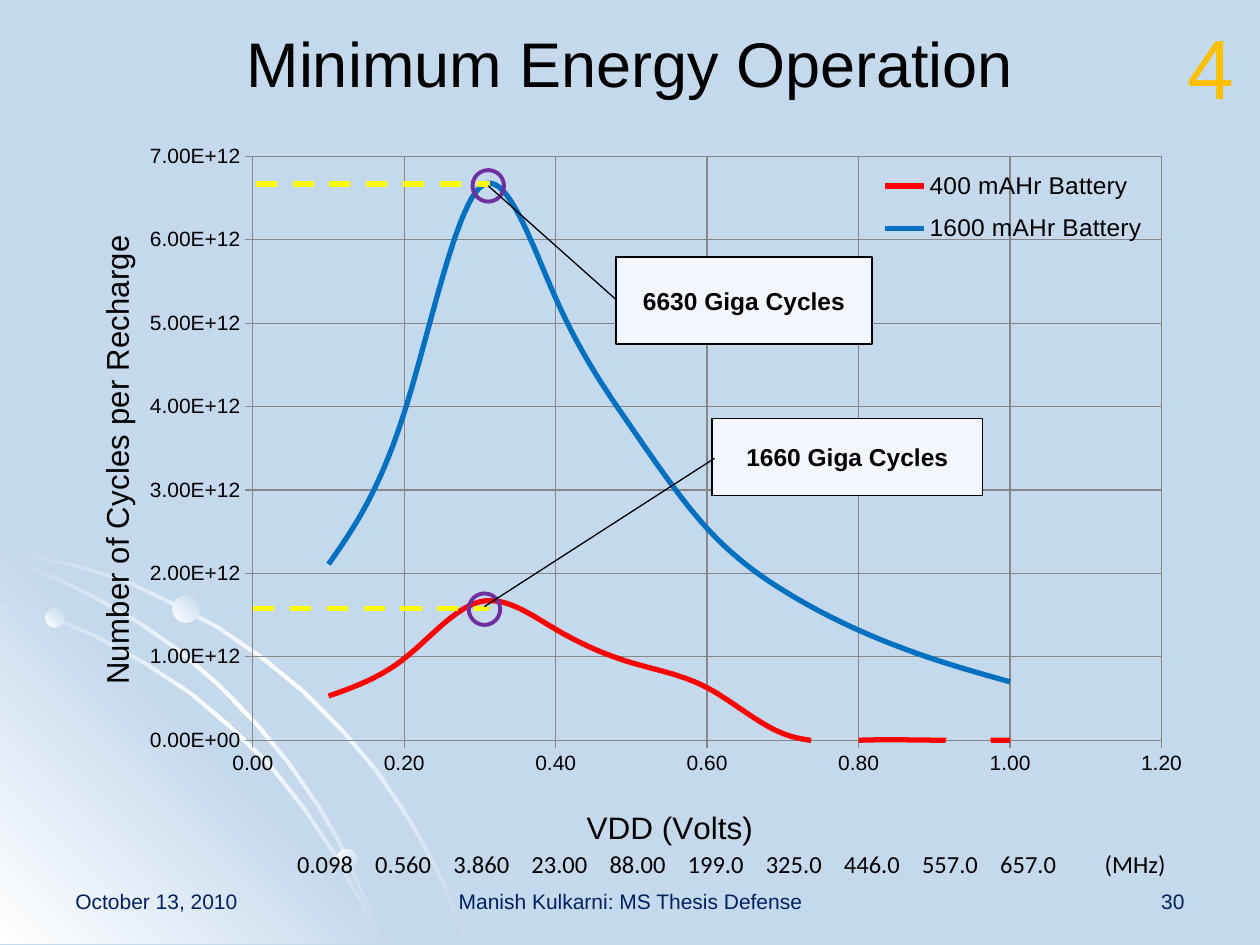
"""Build the Minimum Energy Operation slide."""
from dataclasses import dataclass

from lxml import etree
from pptx import Presentation
from pptx.chart.data import XyChartData
from pptx.dml.color import RGBColor
from pptx.enum.chart import XL_CHART_TYPE, XL_LEGEND_POSITION, XL_TICK_MARK
from pptx.enum.dml import MSO_LINE
from pptx.enum.shapes import MSO_CONNECTOR, MSO_SHAPE
from pptx.enum.text import MSO_ANCHOR, PP_ALIGN
from pptx.oxml.ns import qn
from pptx.util import Inches, Pt

LEFT, CENTER, RIGHT = PP_ALIGN.LEFT, PP_ALIGN.CENTER, PP_ALIGN.RIGHT
MIDDLE = MSO_ANCHOR.MIDDLE
OVAL, CALLOUT = MSO_SHAPE.OVAL, MSO_SHAPE.LINE_CALLOUT_1
STRAIGHT, DASH = MSO_CONNECTOR.STRAIGHT, MSO_LINE.DASH
SMOOTH_SCATTER = XL_CHART_TYPE.XY_SCATTER_SMOOTH_NO_MARKERS
LEGEND_RIGHT, CROSS = XL_LEGEND_POSITION.RIGHT, XL_TICK_MARK.CROSS


@dataclass(frozen=True)
class Theme:
    """Colours, fonts and type sizes."""
    sky: str = "C5D9ED"
    white: str = "FFFFFF"
    ink: str = "000000"
    footer: str = "002060"
    section: str = "FFC000"
    guide: str = "FFFF00"
    ring: str = "7030A0"
    callout: str = "F3F6FF"
    grid: str = "878787"
    small_battery: str = "FF0000"
    large_battery: str = "0070C0"
    font: str = "Arial"
    frequency_font: str = "Calibri"
    title_size: int = 36
    section_size: int = 48
    axis_title_size: int = 18
    label_size: int = 14
    tick_size: int = 12


@dataclass(frozen=True)
class Box:
    """A rectangle in inches."""
    left: float
    top: float
    width: float
    height: float

    def lengths(self) -> list:
        """Return the four sides as lengths."""
        return [Inches(v) for v in (self.left, self.top, self.width, self.height)]


@dataclass(frozen=True)
class Battery:
    """One curve of cycles, in units of 1e12."""
    name: str
    color: str
    tera_cycles: tuple


@dataclass(frozen=True)
class Peak:
    """A maximum with its guide line, ring and callout."""
    label: str
    guide_start: float
    guide_end: float
    level: float
    ring: Box
    callout: Box
    leader: tuple


@dataclass(frozen=True)
class Ball:
    """A shaded ball on an arc."""
    box: Box
    angle: int


THEME = Theme()
VOLTS = [step / 10 for step in range(1, 11)]
BATTERIES = (
    Battery("400 mAHr Battery", THEME.small_battery,
            (0.53, 0.98, 1.66, 1.33, 0.93, 0.63, 0.081, 0, 0.001, 0.001)),
    Battery("1600 mAHr Battery", THEME.large_battery,
            (2.11, 3.93, 6.63, 5.3, 3.75, 2.54, 1.8, 1.32, 0.97, 0.7)),
)
PEAKS = (
    Peak("1660 Giga Cycles", 2.01, 3.88, 4.83, Box(3.72, 4.71, 0.25, 0.25),
         Box(5.65, 3.32, 2.15, 0.61), (0.52, 0.01, 2.45, -0.84)),
    Peak("6630 Giga Cycles", 2.03, 3.89, 1.46, Box(3.75, 1.35, 0.25, 0.25),
         Box(4.89, 2.04, 2.03, 0.69), (0.49, 0, -0.82, -0.5)),
)
FREQUENCIES = ("0.098", "0.560", "3.860", "23.00", "88.00", "199.0",
               "325.0", "446.0", "557.0", "657.0", "(MHz)")
FREQUENCY_TABS = [0.62 * step for step in range(1, 10)] + [6.41]
SLIDE_FOOT = 7.49
ARC_WIDTH = 0.02
ARCS = (
    ((0, 4.35), (0.28, 4.41), (0.57, 4.47), (0.98, 4.59), (1.36, 4.77), (1.74, 4.97),
     (2.09, 5.21), (2.42, 5.48), (2.72, 5.78), (3, 6.11), (3.25, 6.48), (3.39, 6.73),
     (3.52, 6.98), (3.62, 7.23), (3.72, 7.49)),
    ((0, 4.75), (0.41, 4.88), (0.79, 5.05), (1.17, 5.26), (1.52, 5.49), (1.84, 5.76),
     (2.15, 6.06), (2.42, 6.4), (2.66, 6.76), (2.86, 7.12), (2.96, 7.3), (3.03, 7.49)),
    ((0, 4.42), (0.39, 4.55), (0.76, 4.73), (1.11, 4.93), (1.44, 5.16), (1.75, 5.43),
     (2.04, 5.73), (2.29, 6.03), (2.54, 6.39), (2.69, 6.65), (2.82, 6.93), (2.94, 7.2),
     (3.03, 7.49)),
)
CORNER = ((0, 4.27), (3.22, SLIDE_FOOT), (0, SLIDE_FOOT))
BALLS = (Ball(Box(0.36, 4.83, 0.15, 0.15), 315), Ball(Box(2.67, 6.74, 0.16, 0.16), 45),
         Ball(Box(1.37, 4.73, 0.21, 0.21), 315))


def rgb(color: str) -> RGBColor:
    """Turn a hex string into a colour."""
    return RGBColor.from_string(color)


def style_font(font, size: int, color: str = THEME.ink, name: str = THEME.font, bold: bool = False) -> None:
    """Set every property of a font."""
    font.size, font.name, font.bold = Pt(size), name, bold
    font.color.rgb = rgb(color)


def write(frame, text: str, align, size: int, **style) -> None:
    """Write one formatted paragraph."""
    frame.text = text
    paragraph = frame.paragraphs[0]
    paragraph.alignment = align
    style_font(paragraph.runs[0].font, size, **style)


def add_label(slide, box: Box, text: str, align, size: int, **style):
    """Add a text box and return its frame."""
    frame = slide.shapes.add_textbox(*box.lengths()).text_frame
    frame.word_wrap = True
    write(frame, text, align, size, **style)
    return frame


def shade(shape, colors: tuple, angle: int) -> None:
    """Give a shape an evenly stepped gradient at a clockwise angle."""
    shape.shadow.inherit = False
    shape.line.fill.background()
    shape.fill.gradient()
    shape.fill.gradient_angle = 360 - angle
    stops = shape._element.spPr.find(qn("a:gradFill")).find(qn("a:gsLst"))
    stops.clear()
    for index, color in enumerate(colors):
        position = 100000 * index // (len(colors) - 1)
        stop = etree.SubElement(stops, qn("a:gs"), pos=str(position))
        etree.SubElement(stop, qn("a:srgbClr"), val=color)


def add_outline(slide, points: tuple, colors: tuple, angle: int) -> None:
    """Add a closed shaded outline."""
    start, *rest = [(Inches(x), Inches(y)) for x, y in points]
    builder = slide.shapes.build_freeform(*start)
    builder.add_line_segments(rest, close=True)
    shade(builder.convert_to_shape(), colors, angle)


def add_backdrop(slide) -> None:
    """Draw the sky, the arcs and their balls."""
    sky, white = THEME.sky, THEME.white
    slide.background.fill.solid()
    slide.background.fill.fore_color.rgb = rgb(sky)
    add_outline(slide, CORNER, (white, sky, white), 315)
    for upper in ARCS:
        lower = tuple((max(x - ARC_WIDTH, 0), min(y + ARC_WIDTH, SLIDE_FOOT)) for x, y in reversed(upper))
        add_outline(slide, upper + lower, (sky, white, sky), 45)
    for ball in BALLS:
        shade(slide.shapes.add_shape(OVAL, *ball.box.lengths()), (white, sky), ball.angle)


def set_layout(parent, index: int, **settings) -> None:
    """Fix the place of a chart part by fractions of the chart."""
    for previous in parent.findall(qn("c:layout")):
        parent.remove(previous)
    layout = etree.Element(qn("c:layout"))
    manual = etree.SubElement(layout, qn("c:manualLayout"))
    for key, value in settings.items():
        etree.SubElement(manual, qn(f"c:{key}"), val=str(value))
    parent.insert(index, layout)


def style_axis(axis, title: str, top: float, step: float, number_format: str, x: float, y: float) -> None:
    """Format an axis with its title, scale and grid."""
    axis.minimum_scale, axis.maximum_scale, axis.major_unit = 0, top, step
    axis.major_tick_mark = CROSS
    axis.has_major_gridlines = True
    for line in (axis.format.line, axis.major_gridlines.format.line):
        line.color.rgb, line.width = rgb(THEME.grid), Pt(0.75)
    axis.tick_labels.number_format = number_format
    axis.tick_labels.number_format_is_linked = False
    style_font(axis.tick_labels.font, THEME.tick_size)
    write(axis.axis_title.text_frame, title, CENTER, THEME.axis_title_size)
    set_layout(axis.axis_title._element, 1, xMode="edge", yMode="edge", x=x, y=y)


def add_cycles_chart(slide) -> None:
    """Add the cycles against voltage chart."""
    data = XyChartData()
    for battery in BATTERIES:
        points = data.add_series(battery.name)
        for volts, cycles in zip(VOLTS, battery.tera_cycles):
            points.add_data_point(volts, round(cycles * 1e12))
    box = Box(0.44, 1.02, 9.27, 5.77)
    chart = slide.shapes.add_chart(SMOOTH_SCATTER, *box.lengths(), data).chart
    style_font(chart.font, 10)
    chart.has_title = False
    chart.plots[0].vary_by_categories = False
    for curve, battery in zip(chart.plots[0].series, BATTERIES):
        curve.format.line.color.rgb, curve.format.line.width = rgb(battery.color), Pt(3)
        curve._element.find(qn("c:smooth")).set("val", "1")
    style_axis(chart.category_axis, "VDD (Volts)", 1.2, 0.2, "0.00", 0.45, 0.94)
    style_axis(chart.value_axis, "Number of Cycles per Recharge", 7e12, 1e12, "0.00E+00", 0.03, 0.15)
    chart.has_legend = True
    chart.legend.position, chart.legend.include_in_layout = LEGEND_RIGHT, False
    style_font(chart.legend.font, THEME.label_size)
    edges = {"xMode": "edge", "yMode": "edge"}
    set_layout(chart.legend._element, 1, **edges, x=0.7, y=0.04, w=0.24, h=0.14)
    plot_area = chart._chartSpace.chart.plotArea
    set_layout(plot_area, 0, layoutTarget="inner", **edges, x=0.169, y=0.039, w=0.778, h=0.815)


def add_peak(slide, peak: Peak) -> None:
    """Mark a maximum with a guide, a ring and a callout."""
    level = Inches(peak.level)
    guide = slide.shapes.add_connector(STRAIGHT, Inches(peak.guide_start), level, Inches(peak.guide_end), level)
    guide.line.color.rgb, guide.line.width = rgb(THEME.guide), Pt(3)
    guide.line.dash_style = DASH
    etree.SubElement(guide._element.spPr, qn("a:effectLst"))
    ring = slide.shapes.add_shape(OVAL, *peak.ring.lengths())
    ring.shadow.inherit = False
    ring.fill.background()
    ring.line.color.rgb, ring.line.width = rgb(THEME.ring), Pt(2.25)
    callout = slide.shapes.add_shape(CALLOUT, *peak.callout.lengths())
    callout.shadow.inherit = False
    for index, value in enumerate(peak.leader):
        callout.adjustments[index] = value
    callout.fill.solid()
    callout.fill.fore_color.rgb = rgb(THEME.callout)
    callout.line.color.rgb, callout.line.width = rgb(THEME.ink), Pt(0.75)
    callout.text_frame.vertical_anchor = MIDDLE
    write(callout.text_frame, peak.label, CENTER, THEME.label_size, bold=True)


def add_frequencies(slide) -> None:
    """Add the row of clock frequencies on tab stops."""
    frame = add_label(slide, Box(2.26, 6.69, 7.7, 0.34), "\t".join(FREQUENCIES), LEFT,
                      THEME.label_size, name=THEME.frequency_font)
    tabs = etree.SubElement(frame.paragraphs[0]._p.get_or_add_pPr(), qn("a:tabLst"))
    for stop in FREQUENCY_TABS:
        etree.SubElement(tabs, qn("a:tab"), pos=str(Inches(stop)), algn="l")


def main() -> None:
    """Build and save the slide."""
    deck = Presentation()
    deck.slide_width, deck.slide_height = Inches(10), Inches(7.5)
    slide = deck.slides.add_slide(deck.slide_layouts[5])
    add_backdrop(slide)
    title = slide.shapes.title
    title.left, title.top, title.width, title.height = Box(0.5, -0.13, 9, 1.25).lengths()
    title.text_frame.vertical_anchor = MIDDLE
    write(title.text_frame, "Minimum Energy Operation", CENTER, THEME.title_size)
    for left, width, text, align in ((0.5, 2.33, "October 13, 2010", LEFT),
                                     (3.42, 3.17, "Manish Kulkarni: MS Thesis Defense", CENTER),
                                     (7.17, 2.33, "30", RIGHT)):
        add_label(slide, Box(left, 7, width, 0.5), text, align, THEME.tick_size, color=THEME.footer)
    add_cycles_chart(slide)
    for peak in PEAKS:
        add_peak(slide, peak)
    section = add_label(slide, Box(9.33, 0.07, 0.39, 0.91), "4", LEFT, THEME.section_size, color=THEME.section)
    section.word_wrap = False
    add_frequencies(slide)
    deck.save("out.pptx")


if __name__ == "__main__":
    main()
